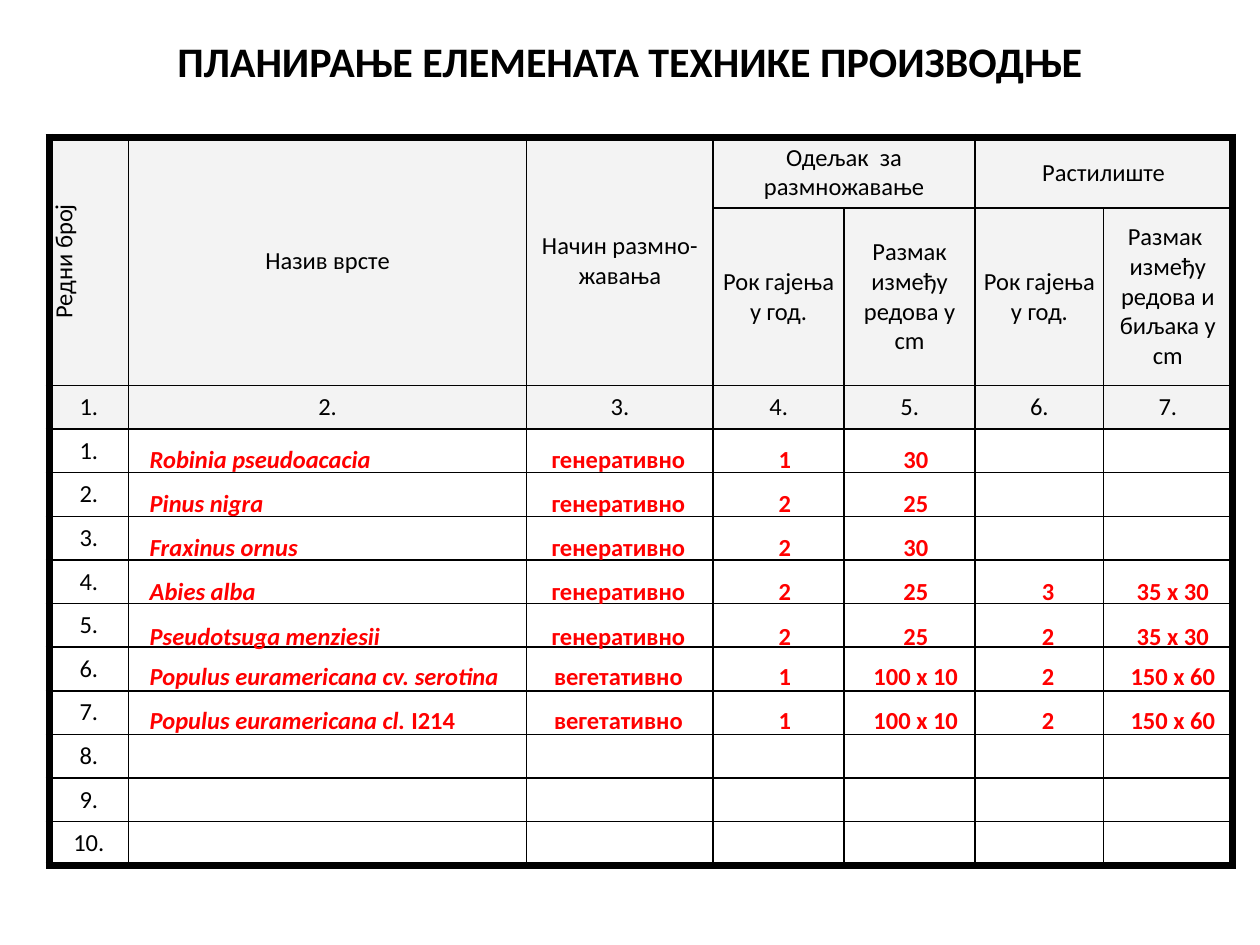
import pptx
import pptx.dml.color
import pptx.enum.text
import pptx.oxml.ns
import pptx.util
from lxml import etree

Inches = pptx.util.Inches
Pt = pptx.util.Pt
RGBColor = pptx.dml.color.RGBColor
Align = pptx.enum.text.PP_ALIGN
Anchor = pptx.enum.text.MSO_ANCHOR
qn = pptx.oxml.ns.qn

BLACK = RGBColor(0x00, 0x00, 0x00)
RED = RGBColor(0xFF, 0x00, 0x00)
HEADER_GREY = RGBColor(0xF3, 0xF3, 0xF3)

TITLE = "ПЛАНИРАЊЕ ЕЛЕМЕНАТА ТЕХНИКЕ ПРОИЗВОДЊЕ"
HEADINGS = {
    (0, 0): "Редни број",
    (0, 1): "Назив врсте",
    (0, 2): "Начин размно-жавања",
    (0, 3): "Одељак  за размножавање",
    (0, 5): "Растилиште",
    (1, 3): "Рок гајења у год.",
    (1, 4): "Размак између редова у cm",
    (1, 5): "Рок гајења у год.",
    (1, 6): "Размак  између\nредова и биљака у cm",
}
MERGES = [((0, 0), (1, 0)), ((0, 1), (1, 1)), ((0, 2), (1, 2)),
          ((0, 3), (0, 4)), ((0, 5), (0, 6))]
SEEDLINGS = [
    ("Robinia pseudoacacia", "", ["генеративно", "1", "30"]),
    ("Pinus nigra", "", ["генеративно", "2", "25"]),
    ("Fraxinus ornus", "", ["генеративно", "2", "30"]),
    ("Abies alba", "", ["генеративно", "2", "25", "3", "35 х 30"]),
    ("Pseudotsuga menziesii", "", ["генеративно", "2", "25", "2", "35 х 30"]),
]
POPLARS = [
    ("Populus euramericana cv. serotina", "",
     ["вегетативно", "1", "100 х 10", "2", "150 х 60"]),
    ("Populus euramericana cl. ", "I214",
     ["вегетативно", "1", "100 х 10", "2", "150 х 60"]),
]

COLUMN_WIDTHS = [0.63, 3.16, 1.48, 1.04, 1.04, 1.02, 1.02]
HEADER_HEIGHTS = [0.56, 1.41]
TABLE_HEIGHT = 5.78
NUMBERED_ROWS = 11
HEADER_ROWS = 3
THIN, THICK = 1, 4.5
TAB_STOPS = [3.72, 5.04, 6.08, 7.13, 8.12]


def format_font(font, **values):
    for name, value in values.items():
        setattr(font, name, value)


def write_paragraphs(frame, text, color, **font_values):
    frame.text = text
    for paragraph in frame.paragraphs:
        paragraph.alignment = Align.CENTER
        for run in paragraph.runs:
            format_font(run.font, name="Calibri", **font_values)
            run.font.color.rgb = color


def draw_borders(cell, widths):
    properties = cell._tc.get_or_add_tcPr()
    for index, (side, width) in enumerate(widths.items()):
        line = etree.Element(qn("a:ln" + side), w=str(Pt(width)))
        fill = etree.SubElement(line, qn("a:solidFill"))
        etree.SubElement(fill, qn("a:srgbClr"), val=str(BLACK))
        properties.insert(index, line)


def add_title(slide):
    title = slide.shapes.title
    box = dict(left=Inches(0), top=Inches(0.23), width=Inches(10), height=Inches(0.5))
    for name, value in box.items():
        setattr(title, name, value)
    title.text_frame.vertical_anchor = Anchor.TOP
    write_paragraphs(title.text_frame, TITLE, BLACK, size=Pt(24), bold=True)


def add_plan_table(slide):
    numbered_height = (TABLE_HEIGHT - sum(HEADER_HEIGHTS)) / NUMBERED_ROWS
    heights = HEADER_HEIGHTS + [numbered_height] * NUMBERED_ROWS
    last_row, last_column = len(heights) - 1, len(COLUMN_WIDTHS) - 1
    table = slide.shapes.add_table(
        len(heights), len(COLUMN_WIDTHS), Inches(0.39), Inches(1.09),
        Inches(sum(COLUMN_WIDTHS)), Inches(TABLE_HEIGHT)).table
    table.first_row = table.horz_banding = False
    for column, width in zip(table.columns, COLUMN_WIDTHS):
        column.width = Inches(width)
    for row, height in zip(table.rows, heights):
        row.height = Inches(height)
    for first, last in MERGES:
        table.cell(*first).merge(table.cell(*last))

    texts = dict(HEADINGS)
    texts.update({(2, c): f"{c + 1}." for c in range(len(COLUMN_WIDTHS))})
    texts.update({(r, 0): f"{r - 2}." for r in range(HEADER_ROWS, len(heights))})
    cell_format = dict(margin_left=Inches(0.06), margin_right=Inches(0.06),
                       margin_top=0, margin_bottom=0, vertical_anchor=Anchor.MIDDLE)
    for r in range(len(heights)):
        for c in range(len(COLUMN_WIDTHS)):
            cell = table.cell(r, c)
            for name, value in cell_format.items():
                setattr(cell, name, value)
            if r < HEADER_ROWS:
                cell.fill.solid()
                cell.fill.fore_color.rgb = HEADER_GREY
            else:
                cell.fill.background()
            right = c + max(cell.span_width, 1) - 1
            draw_borders(cell, {
                "L": THICK if c == 0 else THIN,
                "R": THICK if right == last_column else THIN,
                "T": THICK if r == 0 else THIN,
                "B": THICK if r == last_row else THIN,
            })
            if (r, c) in texts:
                write_paragraphs(cell.text_frame, texts[r, c], BLACK, size=Pt(14))
    table.cell(0, 0)._tc.get_or_add_tcPr().set("vert", "vert270")


def add_species(slide, species, top, height):
    frame = slide.shapes.add_textbox(
        Inches(1.09), Inches(top), Inches(8.96), Inches(height)).text_frame
    frame.word_wrap = True
    for index, (latin_name, clone, values) in enumerate(species):
        paragraph = frame.add_paragraph() if index else frame.paragraphs[0]
        paragraph.line_spacing = 1.5
        tabs = etree.SubElement(paragraph._p.get_or_add_pPr(), qn("a:tabLst"))
        for stop in TAB_STOPS:
            etree.SubElement(tabs, qn("a:tab"), pos=str(Inches(stop)), algn="ctr")
        details = "\t".join([clone] + values)
        for text, italic in ((latin_name, True), (details, False)):
            run = paragraph.add_run()
            run.text = text
            format_font(run.font, name="Calibri", size=Pt(14), bold=True, italic=italic)
            run.font.color.rgb = RED


def main():
    deck = pptx.Presentation()
    deck.slide_width, deck.slide_height = Inches(10), Inches(7.5)
    slide = deck.slides.add_slide(deck.slide_layouts[5])
    add_title(slide)
    add_plan_table(slide)
    add_species(slide, SEEDLINGS, 3.36, 1.87)
    add_species(slide, POPLARS, 5.08, 0.81)
    deck.save("out.pptx")


if __name__ == "__main__":
    main()
